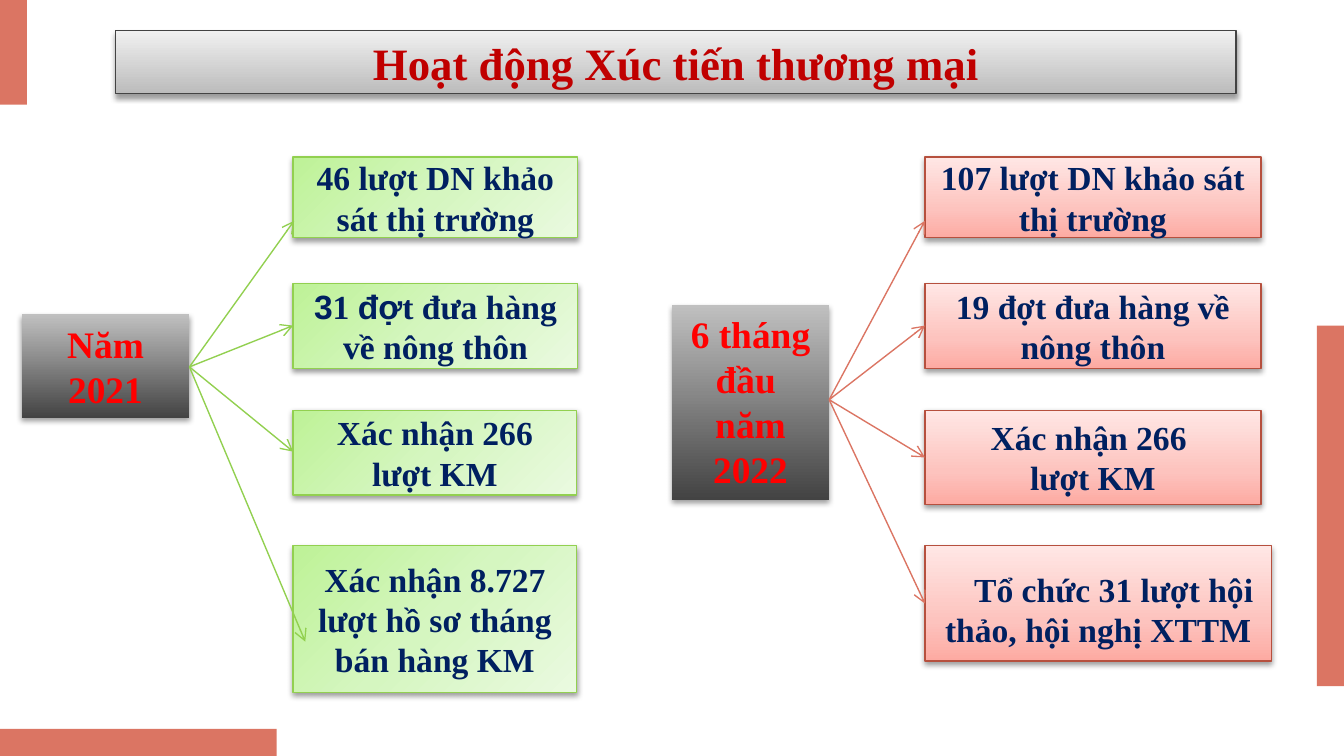
from lxml.etree import SubElement
from pptx import Presentation
from pptx.dml.color import RGBColor
from pptx.enum.shapes import MSO_CONNECTOR, MSO_SHAPE
from pptx.enum.text import MSO_ANCHOR, MSO_AUTO_SIZE, PP_ALIGN
from pptx.oxml.ns import qn
from pptx.util import Cm, Pt

CORAL = RGBColor(0xDB, 0x75, 0x63)
BRICK = RGBColor(0xB6, 0x50, 0x3E)
GREEN = RGBColor(0x92, 0xD0, 0x50)
CHARCOAL = RGBColor(0x43, 0x43, 0x43)
SILVER = RGBColor(0xC0, 0xC0, 0xC0)
PALE_GREY = RGBColor(0xF0, 0xF0, 0xF0)
MID_GREY = RGBColor(0xBC, 0xBC, 0xBC)
DARK_RED = RGBColor(0xC0, 0x00, 0x00)
RED = RGBColor(0xFF, 0x00, 0x00)
NAVY = RGBColor(0x00, 0x20, 0x60)
BLACK = RGBColor(0x00, 0x00, 0x00)

GREEN_STOPS = [(0, RGBColor(0xBE, 0xF2, 0x97)), (50, RGBColor(0xD5, 0xF6, 0xC0)),
               (100, RGBColor(0xEA, 0xFA, 0xE0))]
PINK_STOPS = [(0, RGBColor(0xFD, 0xAA, 0xA2)), (35, RGBColor(0xFD, 0xC3, 0xBE)),
              (100, RGBColor(0xFF, 0xE7, 0xE5))]
GREY_STOPS = [(0, CHARCOAL), (100, SILVER)]
TITLE_STOPS = [(0, MID_GREY), (100, PALE_GREY)]

SERIF = "Times New Roman"
SANS = "Arial"
ROW_TOPS = [2.97, 5.36, 7.75, 10.31]


class TradeSlide:
    line_width = Pt(0.75)
    inset = Cm(0.25)

    def __init__(self, deck):
        self.slide = deck.slides.add_slide(deck.slide_layouts[5])

    def rectangle(self, left, top, width, height):
        return self.slide.shapes.add_shape(
            MSO_SHAPE.RECTANGLE, Cm(left), Cm(top), Cm(width), Cm(height))

    def bar(self, *place):
        bar = self.rectangle(*place)
        bar.shadow.inherit = False
        bar.fill.solid()
        bar.fill.fore_color.rgb = CORAL
        bar.line.fill.background()

    def color_node(self, parent, color):
        return SubElement(parent, qn("a:srgbClr"), val=str(color))

    def paint(self, shape, stops, angle, outline=None):
        shape.fill.gradient()
        shape.fill.gradient_angle = (360 - angle) % 360
        stop_list = shape.element.spPr.find(".//" + qn("a:gsLst"))
        for stop in list(stop_list):
            stop_list.remove(stop)
        for position, color in stops:
            self.color_node(SubElement(stop_list, qn("a:gs"), pos=str(position * 1000)), color)
        if outline is None:
            shape.line.fill.background()
        else:
            shape.line.color.rgb = outline
            shape.line.width = self.line_width
        shape.shadow.inherit = False
        effects = shape.element.spPr.find(qn("a:effectLst"))
        shadow = SubElement(effects, qn("a:outerShdw"), blurRad=str(Pt(3.1)),
                            dist=str(Pt(1.6)), dir="5400000", rotWithShape="0")
        SubElement(self.color_node(shadow, BLACK), qn("a:alpha"), val="38000")

    def set_text(self, shape, paragraphs, size, color):
        frame = shape.text_frame
        frame.word_wrap = True
        for index, content in enumerate(paragraphs):
            paragraph = frame.add_paragraph() if index else frame.paragraphs[0]
            paragraph.alignment = PP_ALIGN.CENTER
            paragraph.font.size = Pt(size)
            paragraph.font.bold = True
            paragraph.font.color.rgb = color
            if isinstance(content, str):
                paragraph.font.name = SERIF
                paragraph.add_run().text = content
                continue
            for text, font in content:
                run = paragraph.add_run()
                run.text = text
                run.font.name = font

    def center_text(self, shape):
        frame = shape.text_frame
        frame.auto_size = MSO_AUTO_SIZE.NONE
        frame.vertical_anchor = MSO_ANCHOR.MIDDLE
        frame.margin_left = frame.margin_right = self.inset
        frame.margin_top = frame.margin_bottom = self.inset

    def title(self, text, left, top, width, height):
        title = self.slide.shapes.title
        title.left, title.top, title.width, title.height = map(Cm, (left, top, width, height))
        self.paint(title, TITLE_STOPS, 270, CHARCOAL)
        self.center_text(title)
        self.set_text(title, [text], 24, DARK_RED)

    def period(self, paragraphs, *place):
        period = self.rectangle(*place)
        self.paint(period, GREY_STOPS, 270)
        self.set_text(period, paragraphs, 20, RED)
        period.text_frame.vertical_anchor = MSO_ANCHOR.TOP
        period.text_frame.auto_size = MSO_AUTO_SIZE.SHAPE_TO_FIT_TEXT

    def activity(self, paragraphs, place, stops, angle, outline):
        activity = self.rectangle(*place)
        self.paint(activity, stops, angle, outline)
        self.center_text(activity)
        self.set_text(activity, paragraphs, 18, NAVY)
        return activity

    def arrow(self, start, end, color):
        arrow = self.slide.shapes.add_connector(
            MSO_CONNECTOR.STRAIGHT, *map(Cm, (*start, *end)))
        arrow.line.color.rgb = color
        arrow.line.width = self.line_width
        properties = arrow.element.spPr
        SubElement(properties.find(qn("a:ln")), qn("a:tailEnd"), type="arrow")
        SubElement(properties, qn("a:effectLst"))


def main():
    deck = Presentation()
    deck.slide_width, deck.slide_height = Cm(25.4), Cm(14.28)
    page = TradeSlide(deck)

    for place in [(0, 0, 0.51, 1.98), (0, 13.77, 5.23, 0.51), (24.89, 6.15, 0.51, 6.81)]:
        page.bar(*place)
    page.title("Hoạt động Xúc tiến thương mại", 2.18, 0.58, 21.18, 1.19)

    page.period(["Năm 2021"], 0.41, 5.94, 3.17, 1.96)
    survey_2021 = ["46 lượt DN khảo sát thị trường"]
    rural_2021 = [[("3", SANS), ("1 ", SERIF), ("đợ", SANS),
                   ("t đưa hàng về nông thôn", SERIF)]]
    promotions_2021 = ["Xác nhận 266 lượt KM"]
    filings_2021 = ["Xác nhận 8.727 lượt hồ sơ tháng bán hàng KM"]
    activities_2021 = [(survey_2021, 5.38, 1.52), (rural_2021, 5.38, 1.6),
                       (promotions_2021, 5.36, 1.6), (filings_2021, 5.36, 2.77)]
    for top, (paragraphs, width, height) in zip(ROW_TOPS, activities_2021):
        page.activity(paragraphs, (5.54, top, width, height), GREEN_STOPS, 45, GREEN)

    page.period(["6 tháng đầu ", "năm 2022"], 12.7, 5.76, 2.97, 3.68)
    activities_2022 = [(["107 lượt DN khảo sát thị trường"], 6.35, 1.52),
                       (["19 đợt đưa hàng về nông thôn"], 6.35, 1.6),
                       (["Xác nhận 266 ", "lượt KM"], 6.35, 1.78),
                       (["Tổ chức 31 lượt hội thảo, hội nghị XTTM"], 6.55, 2.18)]
    for top, (paragraphs, width, height) in zip(ROW_TOPS, activities_2022):
        conferences = page.activity(paragraphs, (17.48, top, width, height),
                                    PINK_STOPS, 270, BRICK)
    conferences.text_frame.margin_top = Cm(0.46)
    conferences.element.find(".//" + qn("a:pPr")).set("indent", str(Cm(0.59)))

    for end in [(5.56, 4.17), (5.54, 6.15), (5.54, 8.53), (5.77, 12.12)]:
        page.arrow((3.58, 6.93), end, GREEN)
    for end in [(17.48, 4.17), (17.48, 6.15), (17.48, 8.64), (17.48, 11.4)]:
        page.arrow((15.67, 7.55), end, CORAL)

    deck.save("out.pptx")


if __name__ == "__main__":
    main()
